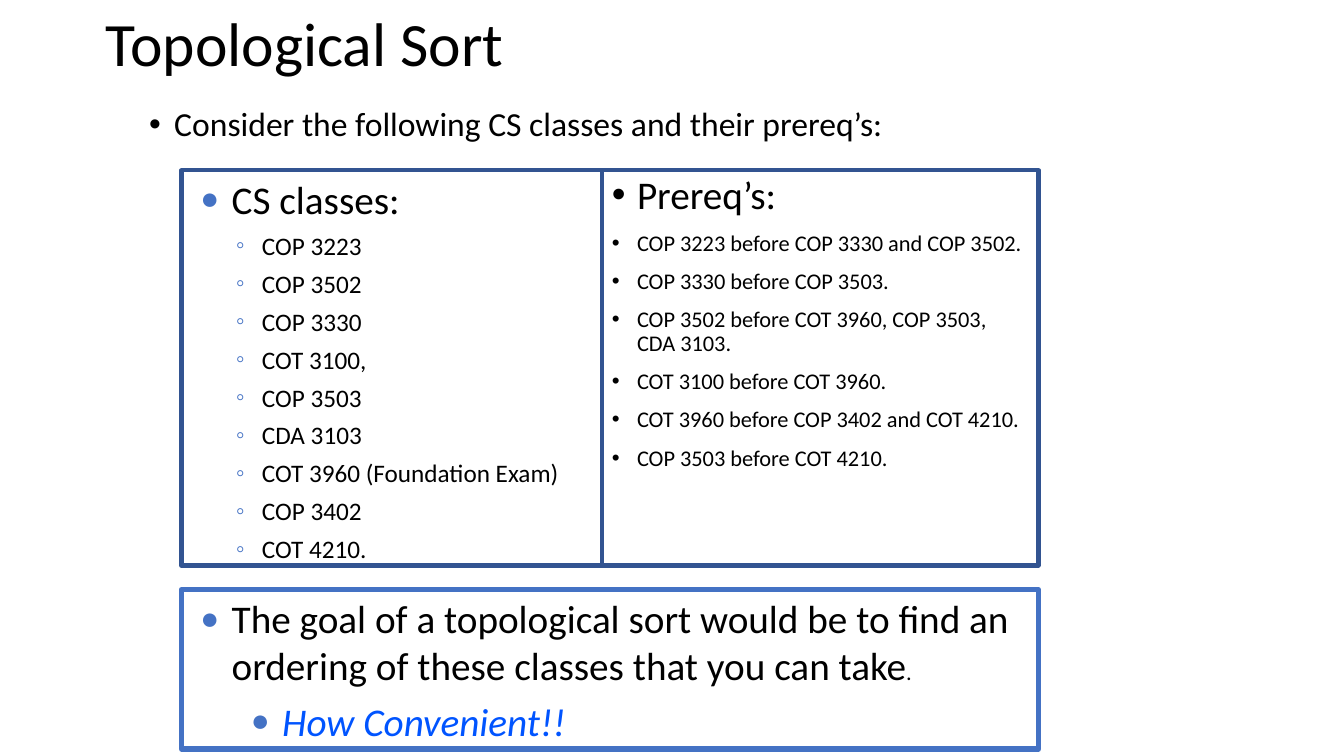
from dataclasses import dataclass

from lxml.etree import SubElement
from pptx import Presentation
from pptx.dml.color import RGBColor
from pptx.enum.shapes import MSO_SHAPE as SHAPE
from pptx.enum.text import MSO_ANCHOR as ANCHOR, MSO_AUTO_SIZE as AUTOSIZE, PP_ALIGN as ALIGN
from pptx.oxml.ns import qn
from pptx.util import Inches, Pt

FONT = "Calibri"
COLORS = {"text": "000000", "frame": "325491", "accent": "4472C4", "remark": "0054FF"}
COLS = {"title": 0.95, "intro": 1.38, "left": 1.8, "middle": 5.97, "right": 10.3}
ROWS = {"intro": 1.02, "top": 1.69, "bottom": 5.61, "goal": 5.85, "end": 7.43}

CLASSES = [
    "COP 3223", "COP 3502", "COP 3330", "COT 3100,", "COP 3503", "CDA 3103",
    "COT 3960 (Foundation Exam)", "COP 3402", "COT 4210.",
]
PREREQS = [
    "COP 3223 before COP 3330 and COP 3502.",
    "COP 3330 before COP 3503.",
    "COP 3502 before COT 3960, COP 3503, CDA 3103.",
    "COT 3100 before COT 3960.",
    "COT 3960 before COP 3402 and COT 4210.",
    "COP 3503 before COT 4210.",
]


@dataclass(frozen=True)
class Style:
    """Describe one kind of bulleted paragraph."""
    size: float
    bullet: str = "•"
    margin: float = 0.25
    hang: float = 0.25
    before: float = 10
    spacing: float = 0.9
    level: int = 0
    bullet_color: str = "text"
    bullet_size: int = 100
    color: str = "text"
    italic: bool = False


INTRO = Style(24)
PREREQ_HEAD = Style(28)
PREREQ = Style(16)
HEAD = Style(28, "●", 0.4, 0.31, 6, 1, 0, "accent", 80)
COURSE = Style(18, "◦", 0.7, 0.26, 5.5, 1, 1, "accent")
REMARK = Style(28, "●", 0.9, 0.31, 6, 1, 1, "accent", 80, "remark", True)


def rgb(name):
    """Look up a palette colour."""
    return RGBColor.from_string(COLORS[name])


def format_run(r, size, color="text", italic=False):
    """Set the font of a run."""
    r.font.name, r.font.size, r.font.italic = FONT, Pt(size), italic
    r.font.color.rgb = rgb(color)


def add_bullet(p, style):
    """Give a paragraph its hanging bullet."""
    pPr = p._p.get_or_add_pPr()
    pPr.set("marL", str(Inches(style.margin)))
    pPr.set("indent", str(-Inches(style.hang)))
    clr = SubElement(pPr, qn("a:buClr"))
    SubElement(clr, qn("a:srgbClr"), val=COLORS[style.bullet_color])
    SubElement(pPr, qn("a:buSzPct"), val=str(style.bullet_size * 1000))
    SubElement(pPr, qn("a:buFont"), typeface="Arial")
    SubElement(pPr, qn("a:buChar"), char=style.bullet)


def fill_text(tf, items):
    """Write (text, style) pairs as bulleted paragraphs."""
    tf.word_wrap, tf.vertical_anchor = True, ANCHOR.TOP
    for i, (text, style) in enumerate(items):
        p = tf.add_paragraph() if i else tf.paragraphs[0]
        p.text = text
        p.level, p.alignment = style.level, ALIGN.LEFT
        p.line_spacing = style.spacing
        p.space_before = Pt(style.before if i else 0)
        add_bullet(p, style)
        format_run(p.runs[0], style.size, style.color, style.italic)


def add_title(s, text):
    """Place and format the title placeholder."""
    title = s.shapes.title
    title.left, title.top = Inches(COLS["title"]), 0
    title.width, title.height = Inches(8.2), Inches(0.92)
    tf = title.text_frame
    tf.text = text
    tf.auto_size, tf.vertical_anchor = AUTOSIZE.NONE, ANCHOR.MIDDLE
    p = tf.paragraphs[0]
    p.alignment, p.line_spacing = ALIGN.LEFT, 0.9
    format_run(p.runs[0], 44)


def add_intro(s, text):
    """Add the unframed opening bullet."""
    box = s.shapes.add_textbox(
        Inches(COLS["intro"]), Inches(ROWS["intro"]), Inches(8.33), Inches(1.08))
    fill_text(box.text_frame, [(text, INTRO)])


def add_panel(s, left, top, right, bottom, line, weight, items):
    """Add a framed list between grid columns and rows."""
    x, y = COLS[left], ROWS[top]
    panel = s.shapes.add_shape(
        SHAPE.RECTANGLE, Inches(x), Inches(y),
        Inches(COLS[right] - x), Inches(ROWS[bottom] - y))
    panel.shadow.inherit = False
    panel.fill.background()
    panel.line.color.rgb, panel.line.width = rgb(line), Pt(weight)
    fill_text(panel.text_frame, items)
    return panel


def main():
    """Build the topological sort slide."""
    prs = Presentation()
    prs.slide_width, prs.slide_height = Inches(13.33), Inches(7.5)
    s = prs.slides.add_slide(prs.slide_layouts[5])
    add_title(s, "Topological Sort")
    add_intro(s, "Consider the following CS classes and their prereq’s:")
    add_panel(s, "middle", "top", "right", "bottom", "frame", 3,
              [("Prereq’s:", PREREQ_HEAD)] + [(text, PREREQ) for text in PREREQS])
    goal = add_panel(s, "left", "goal", "right", "end", "accent", 3.75, [
        ("The goal of a topological sort would be to find an ordering "
         "of these classes that you can take", HEAD),
        ("How Convenient!!", REMARK),
    ])
    r = goal.text_frame.paragraphs[0].add_run()
    r.text = "."
    format_run(r, PREREQ.size)
    add_panel(s, "left", "top", "middle", "bottom", "frame", 3,
              [("CS classes:", HEAD)] + [(text, COURSE) for text in CLASSES])
    prs.save("out.pptx")


if __name__ == "__main__":
    main()
